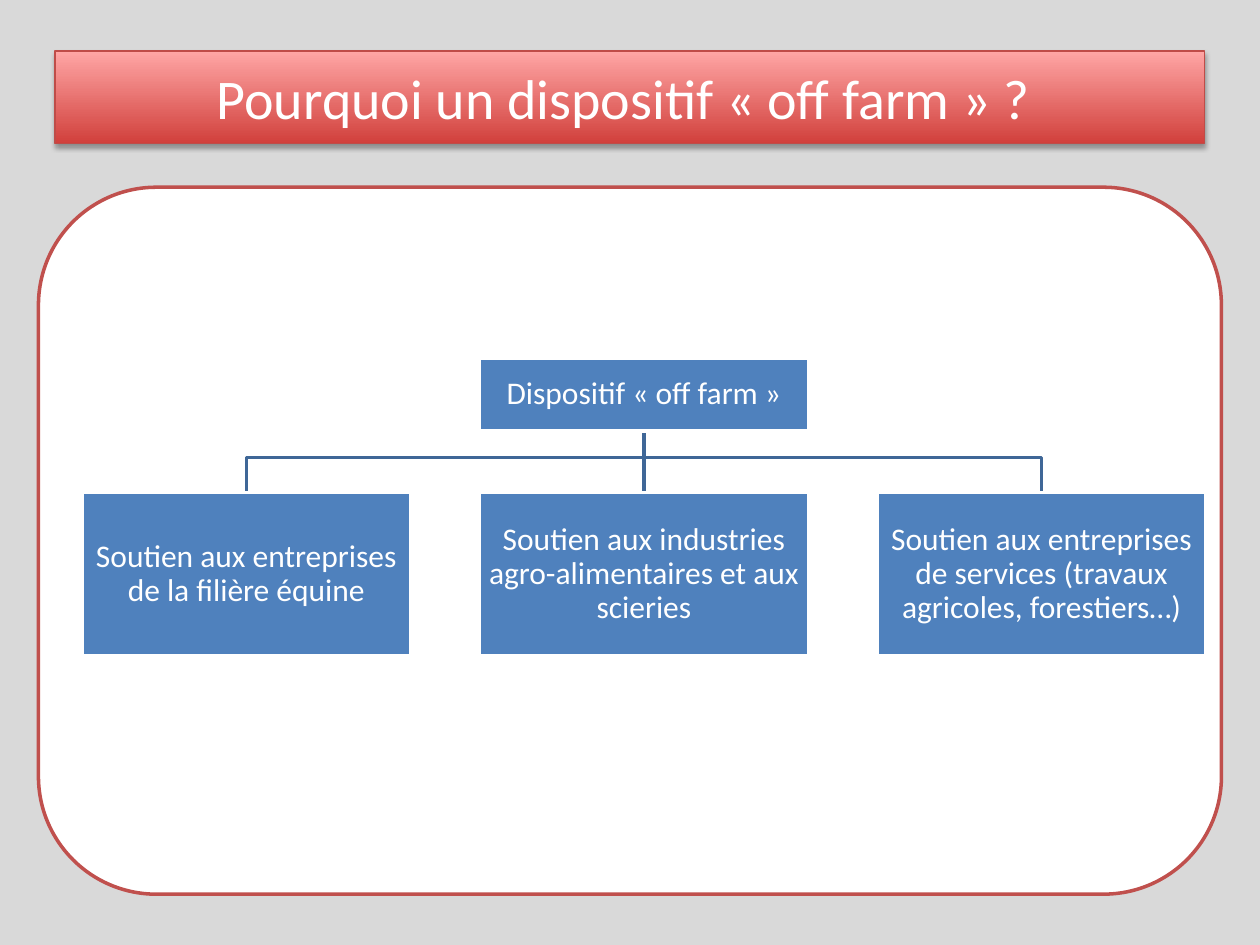
from lxml.etree import SubElement
from pptx import Presentation
from pptx.dml.color import RGBColor
from pptx.enum.shapes import MSO_CONNECTOR, MSO_SHAPE
from pptx.enum.text import MSO_ANCHOR, PP_ALIGN
from pptx.oxml import parse_xml
from pptx.oxml.ns import nsdecls, qn
from pptx.util import Pt

COLORS = {"page": "D9D9D9", "white": "FFFFFF", "frame": "C0504D",
          "edge": "BF4C48", "dark": "D1403C", "light": "FFA6A5",
          "box": "4F81BD", "link": "3F6797"}
ROOT = "Dispositif «\u00a0off farm\u00a0»"
LEAVES = ["Soutien aux entreprises de la filière équine",
          "Soutien aux industries agro-alimentaires et aux scieries",
          "Soutien aux entreprises de services (travaux agricoles, forestiers…)"]
LEFT, STEP, WIDTH = 46.8, 227.2, 188
ROOT_TOP, ROOT_HIGH = 204.5, 41.7
LEAF_TOP, LEAF_HIGH = 281.5, 93.5
BEND = 261.4
SHADOW = (f'<a:effectLst {nsdecls("a")}>'
          '<a:outerShdw blurRad="39370" dist="22860" dir="5400000" rotWithShape="0">'
          '<a:srgbClr val="000000"><a:alpha val="35000"/></a:srgbClr>'
          '</a:outerShdw></a:effectLst>')


def color(name):
    return RGBColor.from_string(COLORS[name])


def apply(item, values):
    for key, value in values.items():
        setattr(item, key, value)


def set_line(shape, name, width):
    shape.line.color.rgb = color(name)
    shape.line.width = Pt(width)


def set_text(shape, text, size, inset, space):
    frame = shape.text_frame
    frame.text = text
    apply(frame, {"word_wrap": True, "vertical_anchor": MSO_ANCHOR.MIDDLE,
                  "margin_left": Pt(inset), "margin_right": Pt(inset),
                  "margin_top": Pt(inset), "margin_bottom": Pt(inset)})
    line = frame.paragraphs[0]
    apply(line, {"alignment": PP_ALIGN.CENTER, "line_spacing": space})
    apply(line.font, {"size": Pt(size), "name": "Calibri"})
    line.font.color.rgb = color("white")


def add_title(slide, text):
    title = slide.shapes.title
    apply(title, {"left": Pt(31.5), "top": Pt(29.2),
                  "width": Pt(657), "height": Pt(52.8)})
    props = title._element.spPr
    shape = SubElement(props, qn("a:prstGeom"), prst="roundRect")
    SubElement(shape, qn("a:avLst"))
    title.fill.gradient()
    title.fill.gradient_angle = 90
    for stop, name in zip(title.fill.gradient_stops, ("dark", "light")):
        stop.color.rgb = color(name)
    set_line(title, "edge", 0.75)
    props.append(parse_xml(SHADOW))
    set_text(title, text, 32, 3.6, 1.0)


def add_box(slide, kind, place, fill, edge):
    box = slide.shapes.add_shape(kind, *map(Pt, place))
    box.shadow.inherit = False
    box.fill.solid()
    box.fill.fore_color.rgb = color(fill)
    set_line(box, edge, 2)
    return box


def add_node(slide, text, place):
    node = add_box(slide, MSO_SHAPE.RECTANGLE, place, "box", "white")
    set_text(node, text, 18, 0.9, 0.9)
    return node


def add_branch(slide, start, end):
    path = slide.shapes.build_freeform(Pt(start), Pt(ROOT_TOP + ROOT_HIGH))
    path.add_line_segments([(Pt(start), Pt(BEND)), (Pt(end), Pt(BEND)),
                            (Pt(end), Pt(LEAF_TOP))], close=False)
    branch = path.convert_to_shape()
    branch.shadow.inherit = False
    branch.fill.background()
    set_line(branch, "link", 2)


def add_stem(slide, mid):
    stem = slide.shapes.add_connector(
        MSO_CONNECTOR.STRAIGHT, Pt(mid), Pt(ROOT_TOP + ROOT_HIGH),
        Pt(mid), Pt(LEAF_TOP))
    set_line(stem, "link", 2)
    SubElement(stem._element.spPr, qn("a:effectLst"))
    return stem


def add_tree(slide):
    lefts = [LEFT + STEP * i for i in range(len(LEAVES))]
    first, mid, last = [left + WIDTH / 2 for left in lefts]
    add_branch(slide, mid, last)
    stem = add_stem(slide, mid)
    add_branch(slide, mid, first)
    root = add_node(slide, ROOT, (lefts[1], ROOT_TOP, WIDTH, ROOT_HIGH))
    nodes = [add_node(slide, text, (left, LEAF_TOP, WIDTH, LEAF_HIGH))
             for text, left in zip(LEAVES, lefts)]
    stem.begin_connect(root, 2)
    stem.end_connect(nodes[1], 0)


def main():
    deck = Presentation()
    apply(deck, {"slide_width": Pt(720), "slide_height": Pt(540)})
    slide = deck.slides.add_slide(deck.slide_layouts[5])
    slide.background.fill.solid()
    slide.background.fill.fore_color.rgb = color("page")
    add_title(slide, "Pourquoi un dispositif «\u00a0off farm\u00a0» ? ")
    add_box(slide, MSO_SHAPE.ROUNDED_RECTANGLE, (22, 107, 676, 404),
            "white", "frame")
    add_tree(slide)
    deck.save("out.pptx")


if __name__ == "__main__":
    main()
